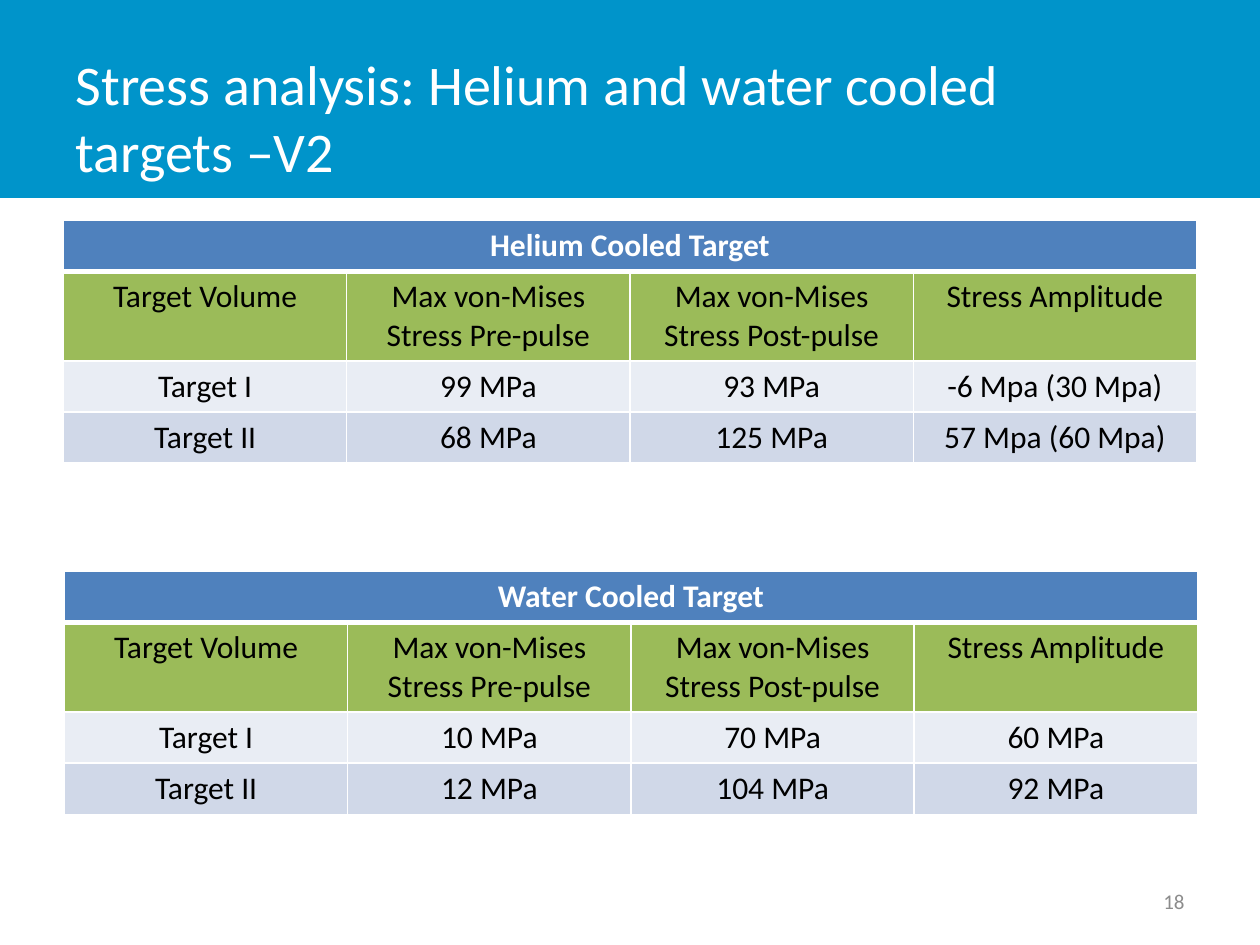
from dataclasses import dataclass

from pptx import Presentation
from pptx.dml.color import RGBColor
from pptx.enum import shapes, text
from pptx.oxml import xmlchemy
from pptx.util import Cm, Pt

BAND = RGBColor(0x00, 0x94, 0xCA)
HEADING = RGBColor(0x4F, 0x81, 0xBD)
LABELS = RGBColor(0x9B, 0xBB, 0x59)
LIGHT = RGBColor(0xE9, 0xED, 0xF4)
DARK = RGBColor(0xD0, 0xD8, 0xE8)
WHITE = RGBColor(0xFF, 0xFF, 0xFF)
BLACK = RGBColor(0x00, 0x00, 0x00)
GREY = RGBColor(0x8C, 0x8C, 0x8C)

COLUMNS = ("Target Volume", "Max von-Mises Stress Pre-pulse",
           "Max von-Mises Stress Post-pulse", "Stress Amplitude")
ROW_FILLS = (HEADING, LABELS, LIGHT, DARK)
ROW_HEIGHTS = (1.03, 1.79, 1.03, 1.03)
COLUMN_WIDTH = 5.71


@dataclass
class StressTable:
    heading: str
    left: float
    top: float
    results: tuple


TABLES = (
    StressTable("Helium Cooled Target", 1.28, 4.44, (
        ("Target I", "99 MPa", "93 MPa", "-6 Mpa (30 Mpa)"),
        ("Target II", "68 MPa", "125 MPa", "57 Mpa (60 Mpa)"))),
    StressTable("Water Cooled Target", 1.3, 11.52, (
        ("Target I", "10 MPa", "70 MPa", "60 MPa"),
        ("Target II", "12 MPa", "104 MPa", "92 MPa"))),
)


def write(tf, words: str, align, size: int, color: RGBColor, bold: bool = False) -> None:
    p = tf.paragraphs[0]
    p.alignment = align
    r = p.add_run()
    r.text = words
    for name, value in {"name": "Calibri", "size": Pt(size), "bold": bold}.items():
        setattr(r.font, name, value)
    r.font.color.rgb = color


def add_borders(cell, top: int, bottom: int) -> None:
    """Draw white borders; must run before the cell's fill is set."""
    tc_pr = cell._tc.get_or_add_tcPr()
    for side, width in {"L": 1, "R": 1, "T": top, "B": bottom}.items():
        ln = xmlchemy.OxmlElement(f"a:ln{side}")
        ln.set("w", str(Pt(width)))
        fill = xmlchemy.OxmlElement("a:solidFill")
        color = xmlchemy.OxmlElement("a:srgbClr")
        color.set("val", str(WHITE))
        fill.append(color)
        ln.append(fill)
        tc_pr.append(ln)


def add_stress_table(slide, stress: StressTable) -> None:
    rows = ((stress.heading, "", "", ""), COLUMNS, *stress.results)
    table = slide.shapes.add_table(
        len(rows), len(COLUMNS), Cm(stress.left), Cm(stress.top),
        Cm(COLUMN_WIDTH * len(COLUMNS)), Cm(sum(ROW_HEIGHTS))).table
    for column in table.columns:
        column.width = Cm(COLUMN_WIDTH)
    table.cell(0, 0).merge(table.cell(0, len(COLUMNS) - 1))
    for i, (words, fill, height) in enumerate(zip(rows, ROW_FILLS, ROW_HEIGHTS)):
        table.rows[i].height = Cm(height)
        for j, word in enumerate(words):
            cell = table.cell(i, j)
            add_borders(cell, top=3 if i == 1 else 1, bottom=3 if i == 0 else 1)
            cell.fill.solid()
            cell.fill.fore_color.rgb = fill
            if word:
                write(cell.text_frame, word, text.PP_ALIGN.CENTER, 18,
                      WHITE if i == 0 else BLACK, bold=i == 0)


def add_band(slide) -> None:
    """Put the coloured band behind the title."""
    sp = slide.shapes.add_shape(shapes.MSO_SHAPE.RECTANGLE, 0, 0, Cm(25.4), Cm(3.99))
    sp.shadow.inherit = False
    sp.fill.solid()
    sp.fill.fore_color.rgb = BAND
    sp.line.fill.background()
    slide.shapes.title._element.addprevious(sp._element)


def add_title(slide, words: str) -> None:
    title = slide.shapes.title
    title.left, title.top, title.width, title.height = Cm(1.27), Cm(0.76), Cm(19.84), Cm(3.18)
    tf = title.text_frame
    tf.auto_size = text.MSO_AUTO_SIZE.NONE
    tf.vertical_anchor = text.MSO_ANCHOR.MIDDLE
    write(tf, words, text.PP_ALIGN.LEFT, 32, WHITE)


def add_slide_number(slide, number: str) -> None:
    tf = slide.shapes.add_textbox(Cm(18.2), Cm(17.65), Cm(5.93), Cm(1.02)).text_frame
    tf.word_wrap = True
    tf.vertical_anchor = text.MSO_ANCHOR.MIDDLE
    write(tf, number, text.PP_ALIGN.RIGHT, 12, GREY)


def main() -> None:
    prs = Presentation()
    prs.slide_width, prs.slide_height = Cm(25.4), Cm(19.05)
    slide = prs.slides.add_slide(prs.slide_layouts.get_by_name("Title Only"))
    add_band(slide)
    add_title(slide, "Stress analysis: Helium and water cooled targets –V2")
    for stress in TABLES:
        add_stress_table(slide, stress)
    add_slide_number(slide, "18")
    prs.save("out.pptx")


if __name__ == "__main__":
    main()
